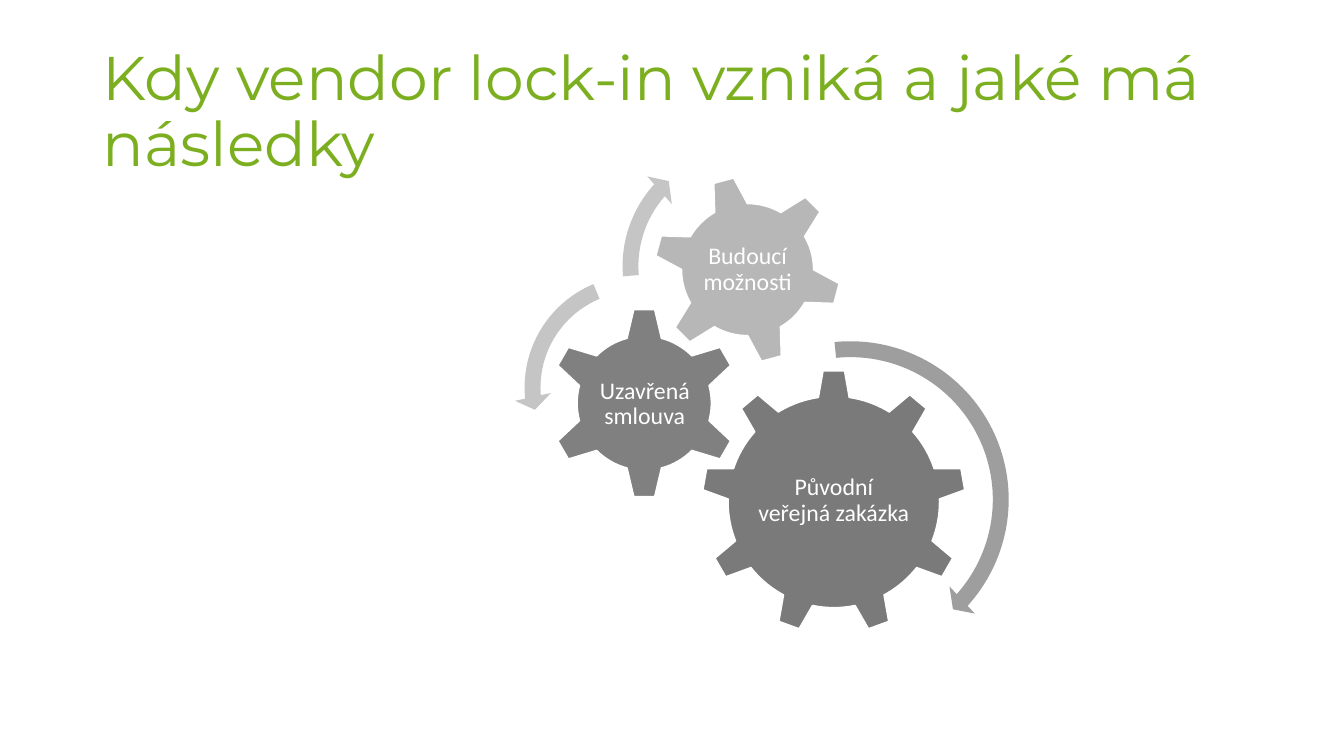
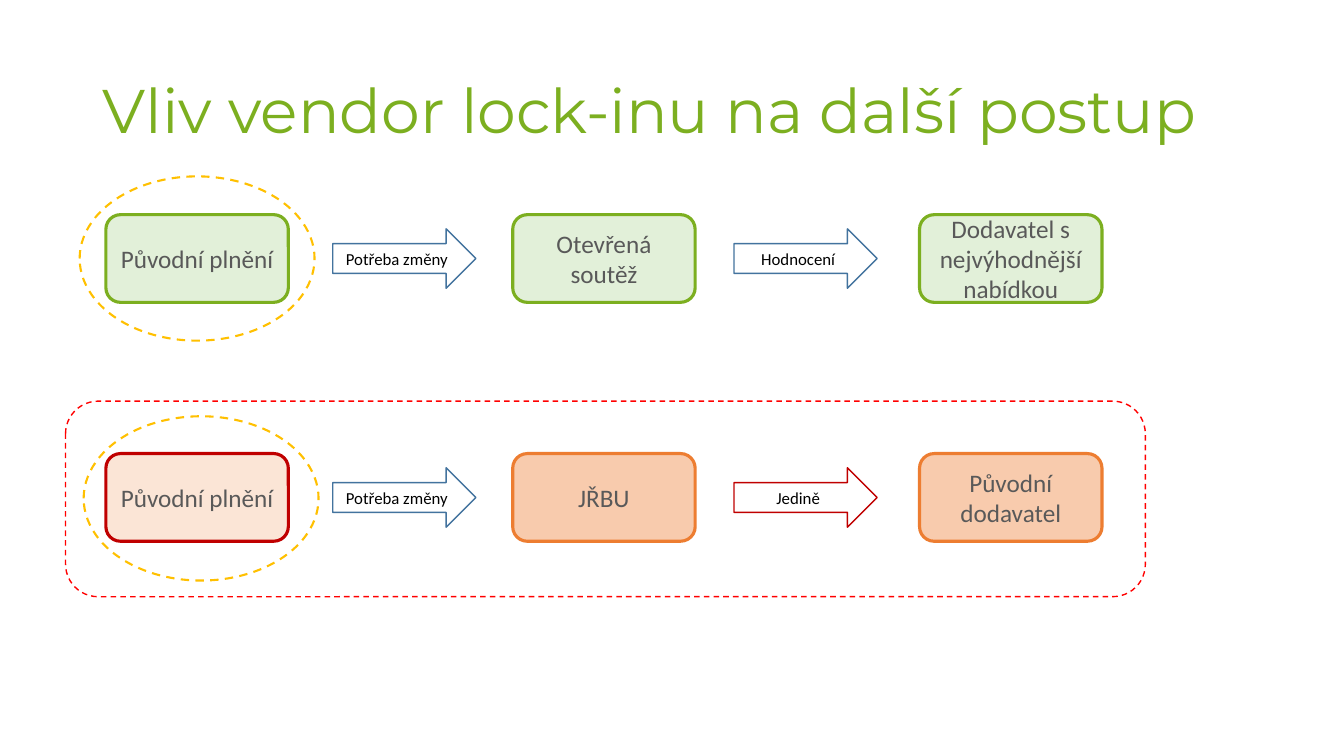
import pptx
import pptx.util
import pptx.dml.color
import pptx.enum.dml
import pptx.enum.shapes
import pptx.enum.text

Inches = pptx.util.Inches
Pt = pptx.util.Pt
SHAPE = pptx.enum.shapes.MSO_SHAPE

GREEN, WHITE, BLACK, TEXT_GREY = "7CAF20", "FFFFFF", "000000", "595959"
RED, ORANGE, BLUE, GOLD, BRIGHT_RED = "C00000", "ED7D31", "43739E", "FFC000", "FF0000"
PALE_GREEN, PALE_RED, PALE_ORANGE = "E2F0D9", "FBE5D6", "F8CBAD"

GEARS_TITLE = "Kdy vendor lock-in vzniká a jaké má následky"
GEARS = [
    ("Původní veřejná zakázka", SHAPE.GEAR_9, "7A7A7A", 0,
     (6.96, 3.67, 2.62, 2.62), (7.49, 4.29, 1.56, 1.35)),
    ("Uzavřená smlouva", SHAPE.GEAR_6, "808080", 0,
     (5.44, 3.05, 1.9, 1.9), (5.92, 3.54, 0.95, 0.94)),
    ("Budoucí možnosti", SHAPE.GEAR_6, "B7B7B7", 345,
     (6.48, 1.74, 1.87, 1.87), (6.89, 2.15, 1.05, 1.05)),
]
# kind, colour, place, band %, three angles in degrees, head %
TURNS = [
    (SHAPE.CIRCULAR_ARROW, "9E9E9E", (6.76, 3.28, 3.35, 3.35), 4.7, (4.98, 42, 264.22), 5.5),
    (SHAPE.LEFT_CIRCULAR_ARROW, "C5C5C5", (5.1, 2.63, 2.43, 2.43), 6.5, (7.17, 174.82, 247.3), 7.5),
    (SHAPE.CIRCULAR_ARROW, "C5C5C5", (6.07, 1.33, 2.62, 2.62), 6, (6.57, 221.9, 175.14), 7),
]

FLOW_TITLE = "Vliv vendor lock-inu na další postup"
FLOWS = [
    {"steps": [("Původní plnění", PALE_GREEN, GREEN),
               ("Otevřená soutěž", PALE_GREEN, GREEN),
               ("Dodavatel s nejvýhodnější nabídkou", PALE_GREEN, GREEN)],
     "arrows": [("Potřeba změny", BLUE), ("Hodnocení", BLUE)]},
    {"steps": [("Původní plnění", PALE_RED, RED),
               ("JŘBU", PALE_ORANGE, ORANGE),
               ("Původní dodavatel", PALE_ORANGE, ORANGE)],
     "arrows": [("Potřeba změny", BLUE), ("Jedině", RED)]},
]
FRAMES = [
    (SHAPE.ROUNDED_RECTANGLE, (0.65, 3.98, 10.71, 1.94), BRIGHT_RED, 1),
    (SHAPE.OVAL, (0.83, 4.13, 2.33, 1.63), GOLD, 1.5),
    (SHAPE.OVAL, (0.79, 1.75, 2.33, 1.63), GOLD, 1.5),
]
ROW_TOP, ROW_STEP = 2.13, 2.37
STEP_LEFT, STEP_STEP, STEP_SIZE = 1.05, 4.035, (1.81, 0.87)
ARROW_LEFT, ARROW_STEP, ARROW_SIZE = 3.3, 3.98, (1.42, 0.59)


def rgb(value):
    return pptx.dml.color.RGBColor.from_string(value)


def write(shape, text, size, color, font="Calibri", centred=True, spacing=None, inset=None):
    frame = shape.text_frame
    frame.word_wrap = True
    frame.vertical_anchor = pptx.enum.text.MSO_ANCHOR.MIDDLE
    if inset is not None:
        frame.margin_left = frame.margin_right = Inches(inset)
        frame.margin_top = frame.margin_bottom = Inches(inset)
    para = frame.paragraphs[0]
    para.text = text
    para.alignment = pptx.enum.text.PP_ALIGN.CENTER if centred else pptx.enum.text.PP_ALIGN.LEFT
    para.line_spacing = spacing
    para.font.size = Pt(size)
    para.font.name = font
    para.font.color.rgb = rgb(color)


def add_shape(shapes, kind, place, fill=None, line=None, width=1, dashed=False):
    shape = shapes.add_shape(kind, *map(Inches, place))
    shape.shadow.inherit = False
    if fill:
        shape.fill.solid()
        shape.fill.fore_color.rgb = rgb(fill)
    else:
        shape.fill.background()
    if line:
        shape.line.color.rgb = rgb(line)
        shape.line.width = Pt(width)
        if dashed:
            shape.line.dash_style = pptx.enum.dml.MSO_LINE.DASH
    else:
        shape.line.fill.background()
    return shape


def add_page(deck, title):
    page = deck.slides.add_slide(deck.slide_layouts[6])
    box = page.shapes.add_textbox(*map(Inches, (0.92, 0.4, 11.5, 1.45)))
    write(box, title, 44, GREEN, "Montserrat", centred=False, spacing=0.9)
    return page


def build_gears(deck):
    diagram = add_page(deck, GEARS_TITLE).shapes.add_group_shape().shapes
    for label, kind, fill, rotation, place, label_place in GEARS:
        add_shape(diagram, kind, place, fill, WHITE).rotation = rotation
        box = diagram.add_textbox(*map(Inches, label_place))
        write(box, label, 17, WHITE, spacing=0.9, inset=0.02)
    for kind, fill, place, band, angles, head in TURNS:
        turn = add_shape(diagram, kind, place, fill)
        values = [band / 100, *(angle * 0.6 for angle in angles), head / 100]
        for index, value in enumerate(values):
            turn.adjustments[index] = value


def build_flows(deck):
    shapes = add_page(deck, FLOW_TITLE).shapes
    arrow_drop = (STEP_SIZE[1] - ARROW_SIZE[1]) / 2
    for row, flow in enumerate(FLOWS):
        top = ROW_TOP + row * ROW_STEP
        for column, (text, fill, line) in enumerate(flow["steps"]):
            place = (STEP_LEFT + column * STEP_STEP, top, *STEP_SIZE)
            step = add_shape(shapes, SHAPE.ROUNDED_RECTANGLE, place, fill, line, 2.25)
            write(step, text, 18, TEXT_GREY)
        for column, (text, line) in enumerate(flow["arrows"]):
            place = (ARROW_LEFT + column * ARROW_STEP, top + arrow_drop, *ARROW_SIZE)
            arrow = add_shape(shapes, SHAPE.RIGHT_ARROW, place, WHITE, line)
            write(arrow, text, 12, BLACK)
    for kind, place, line, width in FRAMES:
        add_shape(shapes, kind, place, line=line, width=width, dashed=True)


def main():
    deck = pptx.Presentation()
    deck.slide_width, deck.slide_height = Inches(13.33), Inches(7.5)
    build_gears(deck)
    build_flows(deck)
    deck.save("out.pptx")


if __name__ == "__main__":
    main()
